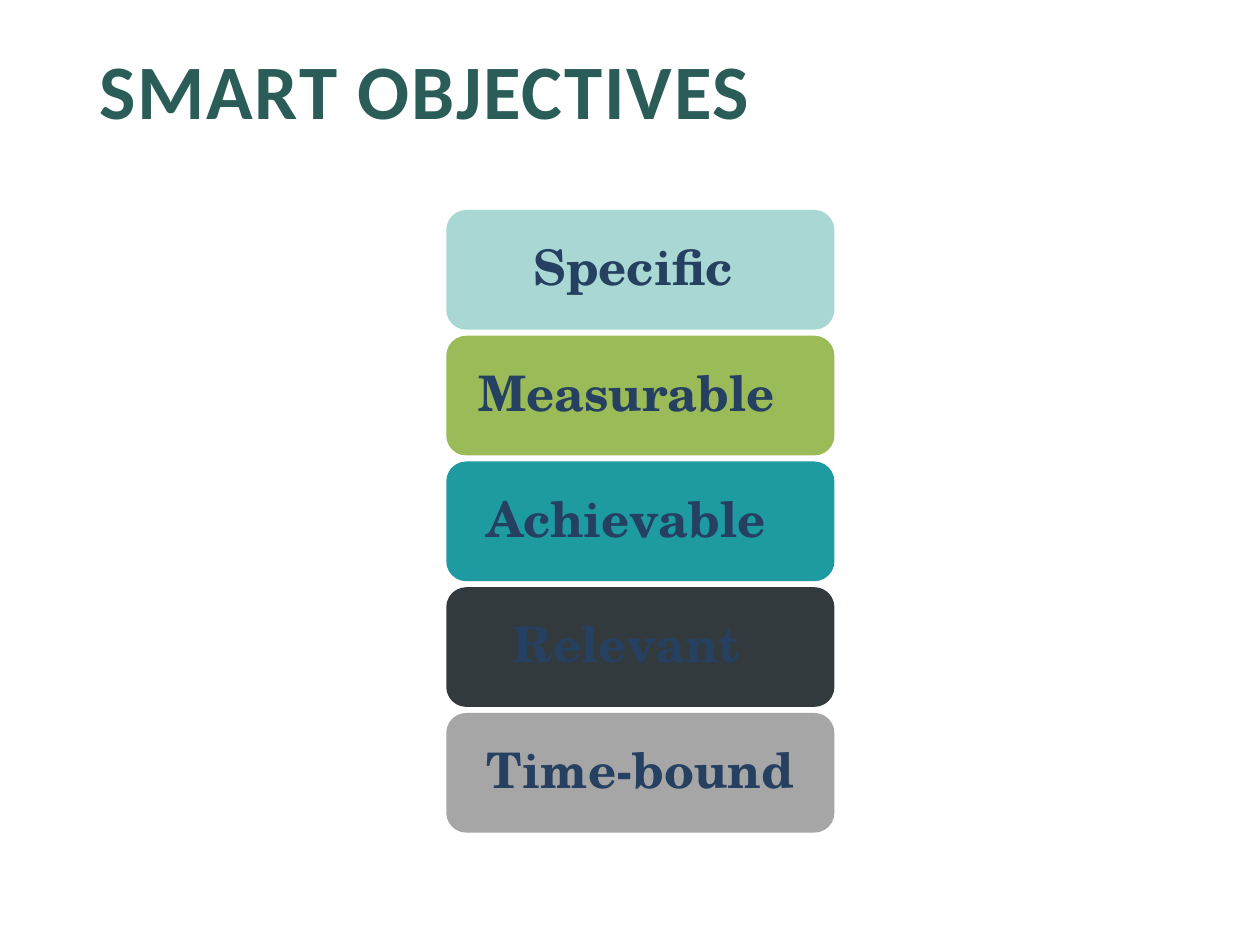
"""Build the SMART objectives slide: a title above a stack of five rounded bars."""
from pptx import Presentation
from pptx.dml.color import RGBColor
from pptx.enum.shapes import MSO_SHAPE
from pptx.enum.text import MSO_ANCHOR, PP_ALIGN
from pptx.util import Pt

ROUNDED = MSO_SHAPE.ROUNDED_RECTANGLE
MIDDLE = MSO_ANCHOR.MIDDLE
LEFT, CENTER = PP_ALIGN.LEFT, PP_ALIGN.CENTER

COLORS = {
    "title": "2A5C58",
    "label": "254061",
    "aqua": "A9D7D4",
    "green": "9BBB59",
    "teal": "1D9BA1",
    "charcoal": "333A3E",
    "gray": "A6A6A6",
}

TITLE = "SMART OBJECTIVES"
OBJECTIVES = [
    ("Specific", "aqua", 8),
    ("Measurable", "green", 16),
    ("Achievable", "teal", 16),
    ("Relevant", "charcoal", 16),
    ("Time-bound", "gray", 0),
]

TITLE_BOX = (49.7, 21.6, 632.9, 68.4)
TITLE_FONT = {"name": "Calibri", "size": Pt(44), "bold": True}
TITLE_PARAGRAPH = {"alignment": LEFT, "line_spacing": 0.8}
LABEL_FONT = {"name": "TeX Gyre Schola", "size": Pt(28), "bold": True}
LABEL_PARAGRAPH = {"alignment": CENTER, "line_spacing": 0.9}
BAR_LEFT, BAR_TOP, BAR_WIDTH, BAR_HEIGHT = 255, 120, 221.8, 68.4
BAR_PITCH = 71.85
BAR_INSET = 8.4


def assign(target, values):
    for key, value in values.items():
        setattr(target, key, value)


def write(frame, text, font, paragraph_format, color):
    assign(frame, {"word_wrap": True, "vertical_anchor": MIDDLE})
    paragraph = frame.paragraphs[0]
    assign(paragraph, paragraph_format)
    run = paragraph.add_run()
    run.text = text
    assign(run.font, font)
    run.font.color.rgb = RGBColor.from_string(COLORS[color])
    return run


def add_title(slide):
    title = slide.shapes.add_textbox(*map(Pt, TITLE_BOX))
    run = write(title.text_frame, TITLE, TITLE_FONT, TITLE_PARAGRAPH, "title")
    run._r.get_or_add_rPr().set("spc", "100")


def add_objective(slide, index, label, color, right_indent):
    top = BAR_TOP + index * BAR_PITCH
    bar = slide.shapes.add_shape(
        ROUNDED, *map(Pt, (BAR_LEFT, top, BAR_WIDTH, BAR_HEIGHT)))
    bar.shadow.inherit = False
    bar.fill.solid()
    bar.fill.fore_color.rgb = RGBColor.from_string(COLORS[color])
    bar.line.fill.background()
    assign(bar.text_frame, {
        "margin_left": Pt(BAR_INSET),
        "margin_right": Pt(BAR_INSET + right_indent),
    })
    write(bar.text_frame, label, LABEL_FONT, LABEL_PARAGRAPH, "label")


def main():
    deck = Presentation()
    assign(deck, {"slide_width": Pt(720), "slide_height": Pt(540)})
    slide = deck.slides.add_slide(deck.slide_layouts[6])
    add_title(slide)
    for index, objective in enumerate(OBJECTIVES):
        add_objective(slide, index, *objective)
    deck.save("out.pptx")


if __name__ == "__main__":
    main()
